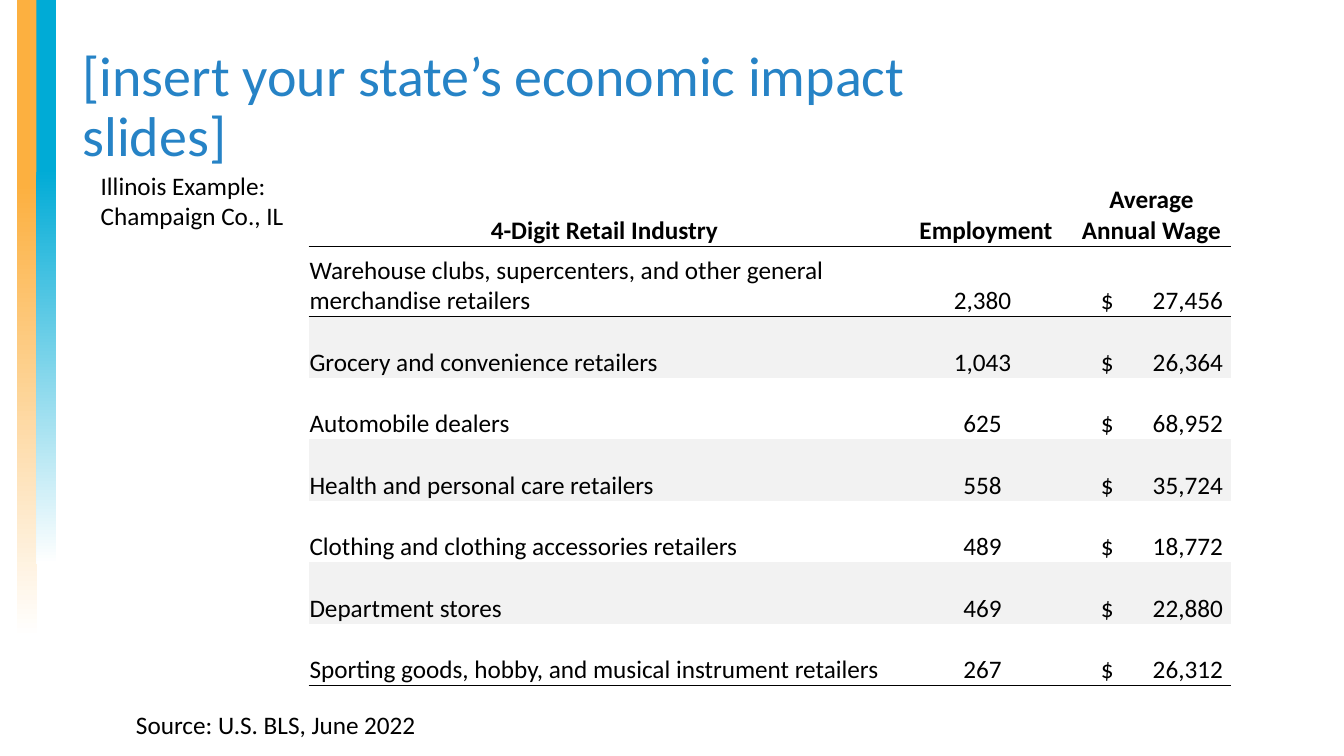
from lxml import etree
from pptx import Presentation
from pptx.dml.color import RGBColor
from pptx.enum import shapes, text
from pptx.oxml import ns
from pptx.util import Inches, Pt

ORANGE = RGBColor(0xFC, 0xB0, 0x40)
CYAN = RGBColor(0x00, 0xAB, 0xD6)
BLUE = RGBColor(0x26, 0x83, 0xC6)
BLACK = RGBColor(0, 0, 0)
WHITE = RGBColor(0xFF, 0xFF, 0xFF)
GREY = RGBColor(0xF2, 0xF2, 0xF2)
PLAIN = "{2D5ABB26-0587-4C30-8999-92F81FD0307C}"

HEADS = ["4-Digit Retail Industry", "Employment", "Average Annual Wage"]
TRADES = [
    ("Warehouse clubs, supercenters, and other general merchandise retailers", 2380, 27456),
    ("Grocery and convenience retailers", 1043, 26364),
    ("Automobile dealers", 625, 68952),
    ("Health and personal care retailers", 558, 35724),
    ("Clothing and clothing accessories retailers", 489, 18772),
    ("Department stores", 469, 22880),
    ("Sporting goods, hobby, and musical instrument retailers", 267, 26312),
]


class Deck:
    """Draws styled elements on the current slide."""

    def __init__(self, slide, face="Calibri", size=18):
        self.slide, self.face, self.size = slide, face, size

    def style(self, para, size=None, color=BLACK, bold=False):
        font = para.font
        font.name, font.size, font.bold = self.face, Pt(size or self.size), bold
        font.color.rgb = color

    def bar(self, left, top, length, color, start):
        bar = self.slide.shapes.add_shape(
            shapes.MSO_SHAPE.RECTANGLE, Inches(left), Inches(top), Inches(length), Inches(0.2))
        bar.rotation = 90
        bar.shadow.inherit = False
        bar.line.fill.background()
        bar.fill.gradient()
        bar.fill.gradient_angle = 0
        for stop, place, tint in zip(bar.fill.gradient_stops, (start, 1), (color, WHITE)):
            stop.position = place
            stop.color.rgb = tint

    def label(self, words, left, top, width, height, size=None, color=BLACK):
        box = self.slide.shapes.add_textbox(
            Inches(left), Inches(top), Inches(width), Inches(height))
        frame = box.text_frame
        frame.word_wrap = True
        frame.text = words
        self.style(frame.paragraphs[0], size, color)
        return frame

    def title(self, words, left, top, width, height):
        frame = self.label(words, left, top, width, height, 40, BLUE)
        frame.margin_right = Inches(0.2)
        frame.vertical_anchor = text.MSO_ANCHOR.MIDDLE
        frame.paragraphs[0].line_spacing = 0.9

    def rule(self, cell, side):
        line = etree.Element(ns.qn("a:" + side), w=str(Pt(0.5)))
        fill = etree.SubElement(line, ns.qn("a:solidFill"))
        etree.SubElement(fill, ns.qn("a:srgbClr"), val=str(BLACK))
        cell._tc.get_or_add_tcPr().insert(0, line)

    def cell(self, cell, words, align, fill=None, bold=False):
        cell.text = words
        cell.vertical_anchor = text.MSO_ANCHOR.BOTTOM
        cell.margin_left = cell.margin_right = cell.margin_top = Inches(0.01)
        cell.margin_bottom = 0
        if fill:
            cell.fill.solid()
            cell.fill.fore_color.rgb = fill
        else:
            cell.fill.background()
        para = cell.text_frame.paragraphs[0]
        para.alignment = align
        if "\t" in words:
            cell.margin_left = Inches(0.29)
            tabs = etree.SubElement(para._p.get_or_add_pPr(), ns.qn("a:tabLst"))
            etree.SubElement(tabs, ns.qn("a:tab"), pos=str(Inches(1.21)), algn="r")
        self.style(para, bold=bold)

    def table(self, left, top, cols, rows, heads, data):
        grid = self.slide.shapes.add_table(
            len(rows), len(cols), Inches(left), Inches(top),
            Inches(sum(cols)), Inches(sum(rows))).table
        grid.horz_banding = grid.first_row = False
        grid._tbl.tblPr.find(ns.qn("a:tableStyleId")).text = PLAIN
        for col, width in zip(grid.columns, cols):
            col.width = Inches(width)
        for row, height in zip(grid.rows, rows):
            row.height = Inches(height)
        mid, start = text.PP_ALIGN.CENTER, text.PP_ALIGN.LEFT
        for c, head in enumerate(heads):
            self.cell(grid.cell(0, c), head, mid, bold=True)
            self.rule(grid.cell(0, c), "lnB")
            self.rule(grid.cell(1, c), "lnT")
            self.rule(grid.cell(len(data), c), "lnB")
        for r, (trade, jobs, wage) in enumerate(data, 1):
            fill = GREY if r % 2 == 0 else None
            self.cell(grid.cell(r, 0), trade, start, fill)
            self.cell(grid.cell(r, 1), f"{jobs:,}", mid, fill)
            grid.cell(r, 1).margin_right = Inches(0.08)
            self.cell(grid.cell(r, 2), f"$\t{wage:,}", start, fill)


def main():
    prs = Presentation()
    prs.slide_width, prs.slide_height = Inches(13.33), Inches(7.5)
    deck = Deck(prs.slides.add_slide(prs.slide_layouts[6]))
    deck.bar(-2.9, 3.06, 6.33, ORANGE, 0.29)
    deck.bar(-2.34, 2.7, 5.6, CYAN, 0.3)
    deck.title("[insert your state’s economic impact slides]", 0.72, 0.35, 9.9, 1.45)
    deck.label("Illinois Example: Champaign Co., IL", 0.9, 1.64, 2.38, 0.71)
    deck.table(3.06, 1.39, [5.87, 1.7, 1.58], [1.05, 0.7] + [0.61] * 6, HEADS, TRADES)
    deck.label("Source: U.S. BLS, June 2022", 1.25, 6.99, 7.28, 0.4)
    prs.save("out.pptx")


if __name__ == "__main__":
    main()
